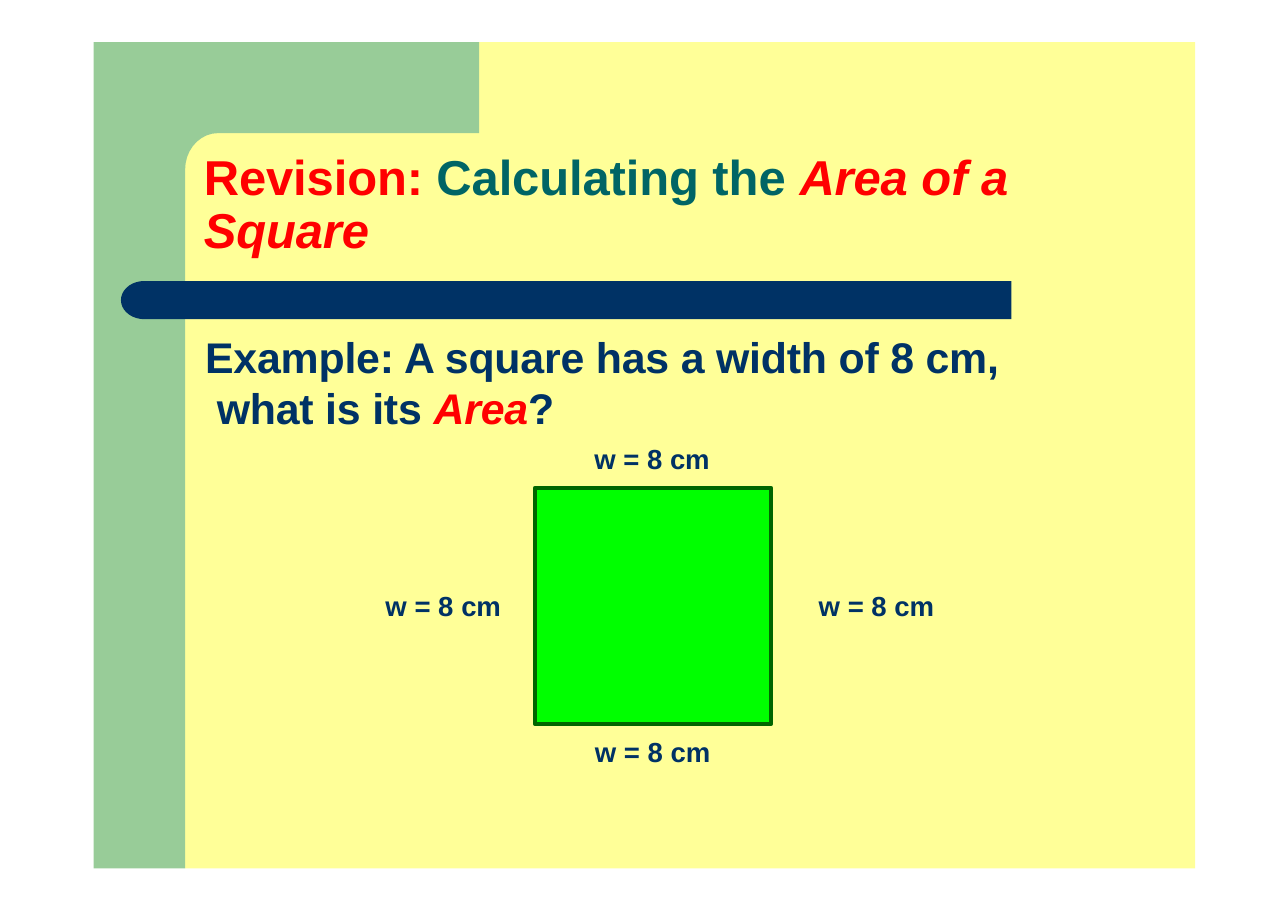
from dataclasses import dataclass
from math import cos, radians, sin

from lxml import etree
from pptx import Presentation
from pptx import util as u
from pptx.dml.color import RGBColor
from pptx.enum import shapes, text

COLOURS = {
    "page": "FFFF98", "band": "98CC98", "navy": "003265", "teal": "006565",
    "red": "FF0000", "square": "00FF00", "edge": "006500",
}
Point = tuple[float, float]


@dataclass
class Box:
    left: float
    top: float
    width: float
    height: float

    def lengths(self) -> list[u.Length]:
        return [u.Cm(v) for v in (self.left, self.top, self.width, self.height)]


@dataclass
class Piece:
    words: str
    colour: str = "navy"
    italic: bool = False
    spacing: int = -10


WIDTH_LABEL = [Piece("w = 8 ", spacing=0), Piece("cm")]


def rgb(name: str) -> RGBColor:
    return RGBColor.from_string(COLOURS[name])


def arc(centre: Point, radii: Point, start: int, end: int) -> list[Point]:
    step = 10 if end > start else -10
    return [(centre[0] + radii[0] * cos(radians(a)), centre[1] + radii[1] * sin(radians(a)))
            for a in range(start, end + step, step)]


def paint(shape, fill: str) -> None:
    shape.shadow.inherit = False
    shape.fill.solid()
    shape.fill.fore_color.rgb = rgb(fill)
    shape.line.fill.background()


def draw_outline(slide, points: list[Point], fill: str) -> None:
    corners = [(u.Cm(x), u.Cm(y)) for x, y in points]
    builder = slide.shapes.build_freeform(*corners[0])
    builder.add_line_segments(corners[1:], close=True)
    paint(builder.convert_to_shape(), fill)


def draw_rectangle(slide, box: Box, fill: str):
    rectangle = slide.shapes.add_shape(shapes.MSO_SHAPE.RECTANGLE, *box.lengths())
    paint(rectangle, fill)
    return rectangle


def prepare_frame(shape, top_inset: float):
    frame = shape.text_frame
    frame.word_wrap = True
    frame.auto_size = text.MSO_AUTO_SIZE.NONE
    frame.vertical_anchor = text.MSO_ANCHOR.TOP
    frame.margin_left = frame.margin_right = frame.margin_bottom = 0
    frame.margin_top = u.Cm(top_inset)
    return frame


def place(slide, placeholder, box: Box) -> None:
    placeholder.left, placeholder.top, placeholder.width, placeholder.height = box.lengths()
    slide.shapes._spTree.append(placeholder._element)


def write(paragraph, pieces: list[Piece], size: int, before: float,
          align=text.PP_ALIGN.LEFT, indent: float = 0.03) -> None:
    paragraph.alignment = align
    paragraph.space_before = u.Pt(before)
    properties = paragraph._p.get_or_add_pPr()
    properties.set("marL", str(u.Cm(indent)))
    properties.set("indent", "0")
    etree.SubElement(properties, properties.tag.replace("pPr", "buNone"))
    for piece in pieces:
        if piece.words.startswith(" "):
            paragraph.add_line_break()
        run = paragraph.add_run()
        run.text = piece.words
        font = run.font
        font.name, font.size = "Arial", u.Pt(size)
        font.bold, font.italic = True, piece.italic
        font.color.rgb = rgb(piece.colour)
        run._r.get_or_add_rPr().set("spc", str(piece.spacing))


def draw_background(slide) -> None:
    draw_rectangle(slide, Box(4.27, 0.97, 23.29, 19.05), "page")
    corner = arc((5.03, 3.91), (0.76, 0.84), 180, 270)
    draw_outline(slide, [(11.05, 0.97), (2.16, 0.97), (2.16, 20.02), (4.27, 20.02),
                         *corner, (11.05, 3.07)], "band")
    rounded_end = arc((3.33, 6.92), (0.54, 0.44), 270, 90)
    draw_outline(slide, [(23.32, 6.48), *rounded_end, (23.32, 7.36)], "navy")


def write_title(slide) -> None:
    title = slide.shapes.title
    place(slide, title, Box(4.67, 3.02, 20.37, 2.97))
    heading = prepare_frame(title, 0.51).paragraphs[0]
    write(heading, [Piece("Revision: ", "red"), Piece("Calculating ", "teal"),
                    Piece("the ", "teal", spacing=0), Piece("Area ", "red", True),
                    Piece("of a ", "red", True, 0), Piece("Square", "red", True)], 32, 5.5)
    heading.line_spacing = u.Pt(34.4)


def write_example(slide) -> None:
    example = slide.placeholders[1]
    place(slide, example, Box(4.7, 7.59, 18.64, 3.4))
    frame = prepare_frame(example, 0.03)
    write(frame.paragraphs[0], [Piece("Example: A square has a width of 8 cm,"),
                                Piece(" what is its "), Piece("Area", "red", True),
                                Piece("?")], 28, 0.8)
    write(frame.add_paragraph(), WIDTH_LABEL, 18, 5.7, text.PP_ALIGN.CENTER, 2.03)


def draw_square(slide) -> None:
    square = draw_rectangle(slide, Box(12.34, 11.25, 5.44, 5.44), "square")
    square.line.color.rgb = rgb("edge")
    square.line.width = u.Pt(3)
    for left, top in [(13.69, 16.92), (18.85, 13.54), (8.86, 13.54)]:
        label = slide.shapes.add_textbox(*Box(left, top, 2.74, 0.84).lengths())
        write(prepare_frame(label, 0.03).paragraphs[0], WIDTH_LABEL, 18, 1)


def main() -> None:
    deck = Presentation()
    deck.slide_width, deck.slide_height = u.Cm(29.7), u.Cm(20.98)
    slide = deck.slides.add_slide(deck.slide_layouts[1])
    draw_background(slide)
    write_title(slide)
    draw_square(slide)
    write_example(slide)
    deck.save("out.pptx")


if __name__ == "__main__":
    main()
